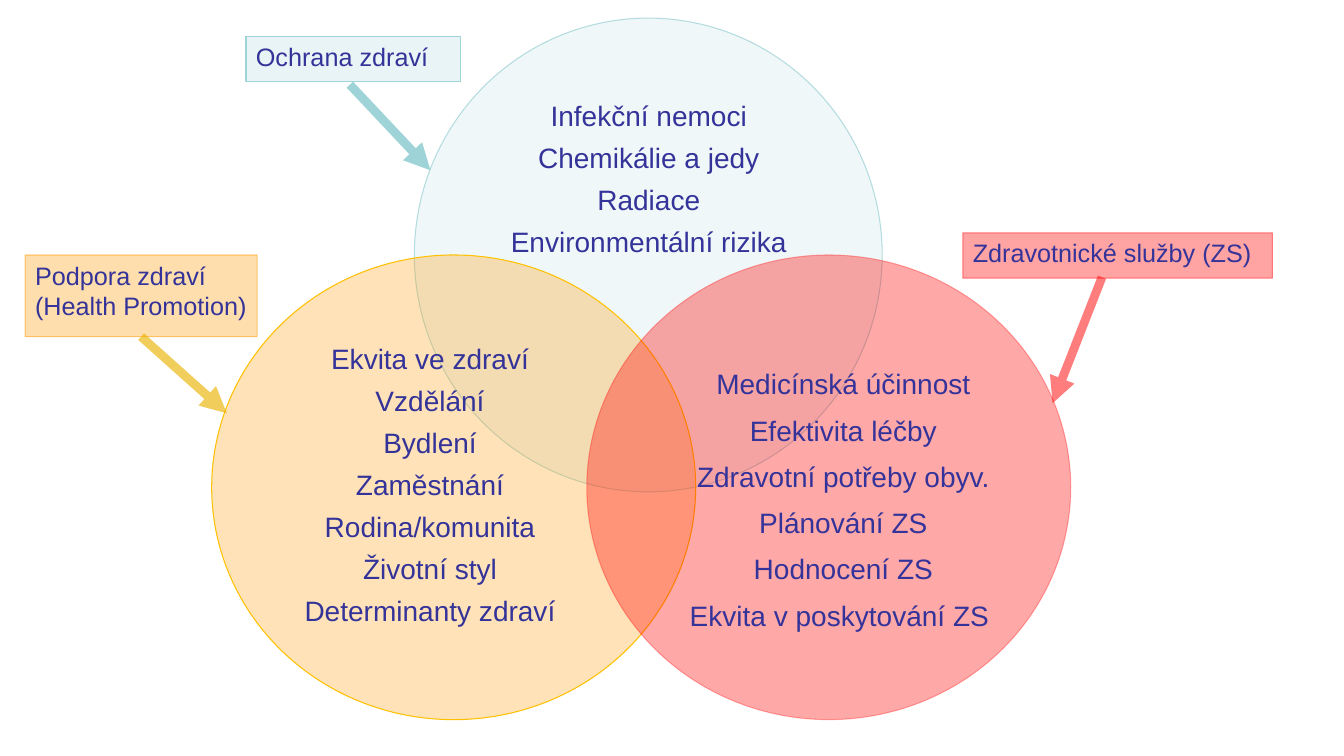
from pptx import Presentation
from pptx.dml.color import RGBColor
from pptx.enum.shapes import MSO_CONNECTOR, MSO_SHAPE
from pptx.enum.text import MSO_ANCHOR, PP_ALIGN
from pptx.oxml.ns import qn
from pptx.util import Inches, Pt
from lxml import etree

OVAL, RECTANGLE = MSO_SHAPE.OVAL, MSO_SHAPE.RECTANGLE
STRAIGHT = MSO_CONNECTOR.STRAIGHT
CENTER, LEFT, TOP = PP_ALIGN.CENTER, PP_ALIGN.LEFT, MSO_ANCHOR.TOP
BOTTOM_SITE = 2

THEME = {
    "font": "Arial", "text": "333399",
    "topic_size": 20, "label_size": 18,
    "outline": 0.75, "arrow": 6.25,
    "pale": "DAEDEF", "deep_teal": "72BFC5", "teal": "9ED3D7",
    "orange": "FF9900", "gold": "FFC000", "dark_gold": "EAB200", "red": "FF0000",
}

deck = Presentation()
deck.slide_width, deck.slide_height = Inches(13.33), Inches(7.5)
page = deck.slides.add_slide(deck.slide_layouts[6])

# Grid of square cells, ten to the inch
COLUMN = deck.slide_width / 133.3
ROW = deck.slide_height / 75


def paint(fill, color, opacity):
    """Set a solid colour with an opacity in percent."""
    fill.solid()
    fill.fore_color.rgb = RGBColor.from_string(THEME[color])
    if opacity < 100:
        tint = fill._xPr.find(qn("a:solidFill"))[0]
        etree.SubElement(tint, qn("a:alpha"), val=str(opacity * 1000))


def write(frame, lines, size, align, gap):
    frame.word_wrap = True
    frame.vertical_anchor = TOP
    for index, line in enumerate(lines):
        para = frame.paragraphs[0] if index == 0 else frame.add_paragraph()
        para.text = line
        para.alignment = align
        para.space_after = Pt(gap)
        para.font.name = THEME["font"]
        para.font.size = Pt(THEME[size])
        para.font.color.rgb = RGBColor.from_string(THEME["text"])


# Circles and labels: kind, left, top, width, height, fill, outline, lines
LOWER_TOP, LOWER_WIDTH, LOWER_HEIGHT = 25.3, 48, 46.1
areas = [
    (OVAL, 41.1, 1.8, 46.4, 47, ("pale", 40), ("deep_teal", 49), []),
    (OVAL, 21, LOWER_TOP, LOWER_WIDTH, LOWER_HEIGHT, ("orange", 28), ("gold", 100), []),
    (OVAL, 58.2, LOWER_TOP, LOWER_WIDTH, LOWER_HEIGHT, ("red", 34), ("red", 31), []),
    (RECTANGLE, 24.4, 3.6, 21.3, 4.5, ("teal", 23), ("teal", 100), ["Ochrana zdraví"]),
    (RECTANGLE, 95.5, 23.1, 30.7, 4.5, ("red", 36), ("red", 47),
     ["Zdravotnické služby (ZS)"]),
    (RECTANGLE, 2.5, LOWER_TOP, 23, 8.1, ("orange", 32), ("orange", 50),
     ["Podpora zdraví", "(Health Promotion)"]),
]
for kind, left, top, width, height, fill, outline, lines in areas:
    area = page.shapes.add_shape(kind, int(left * COLUMN), int(top * ROW),
                                 int(width * COLUMN), int(height * ROW))
    area.shadow.inherit = False
    paint(area.fill, *fill)
    area.line.width = Pt(THEME["outline"])
    paint(area.line.fill, *outline)
    if lines:
        write(area.text_frame, lines, "label_size", LEFT, 0)
promotion_label = area

# Topics in each circle: left, top, width, height, gap, lines
topics = [
    (45.5, 9.3, 37.7, 17, 6,
     ["Infekční nemoci", "Chemikálie a jedy", "Radiace", "Environmentální rizika"]),
    (29.2, 33.4, 26.9, 29.6, 6,
     ["Ekvita ve zdraví", "Vzdělání", "Bydlení", "Zaměstnání", "Rodina/komunita",
      "Životní styl", "Determinanty zdraví"]),
    (63, 35.9, 41.3, 27.5, 9,
     ["Medicínská účinnost", "Efektivita léčby", "Zdravotní potřeby obyv.",
      "Plánování ZS", "Hodnocení ZS", "Ekvita v poskytování ZS "]),
]
for left, top, width, height, gap, lines in topics:
    box = page.shapes.add_textbox(int(left * COLUMN), int(top * ROW),
                                  int(width * COLUMN), int(height * ROW))
    write(box.text_frame, lines, "topic_size", CENTER, gap)

# Arrows from labels to circles: start, end, colour, opacity
arrows = [
    (34.7, 8.4, 42.7, 16.9, "teal", 100),
    (109.3, 27.5, 104.4, 40, "red", 51),
    (14, 33.4, 22.5, 41, "dark_gold", 64),
]
for start_x, start_y, end_x, end_y, color, opacity in arrows:
    arrow = page.shapes.add_connector(STRAIGHT, int(start_x * COLUMN), int(start_y * ROW),
                                      int(end_x * COLUMN), int(end_y * ROW))
    arrow.line.width = Pt(THEME["arrow"])
    paint(arrow.line.fill, color, opacity)
    etree.SubElement(arrow.line._get_or_add_ln(), qn("a:tailEnd"), type="triangle")
    etree.SubElement(arrow._element.spPr, qn("a:effectLst"))
arrow.begin_connect(promotion_label, BOTTOM_SITE)

deck.save("out.pptx")
